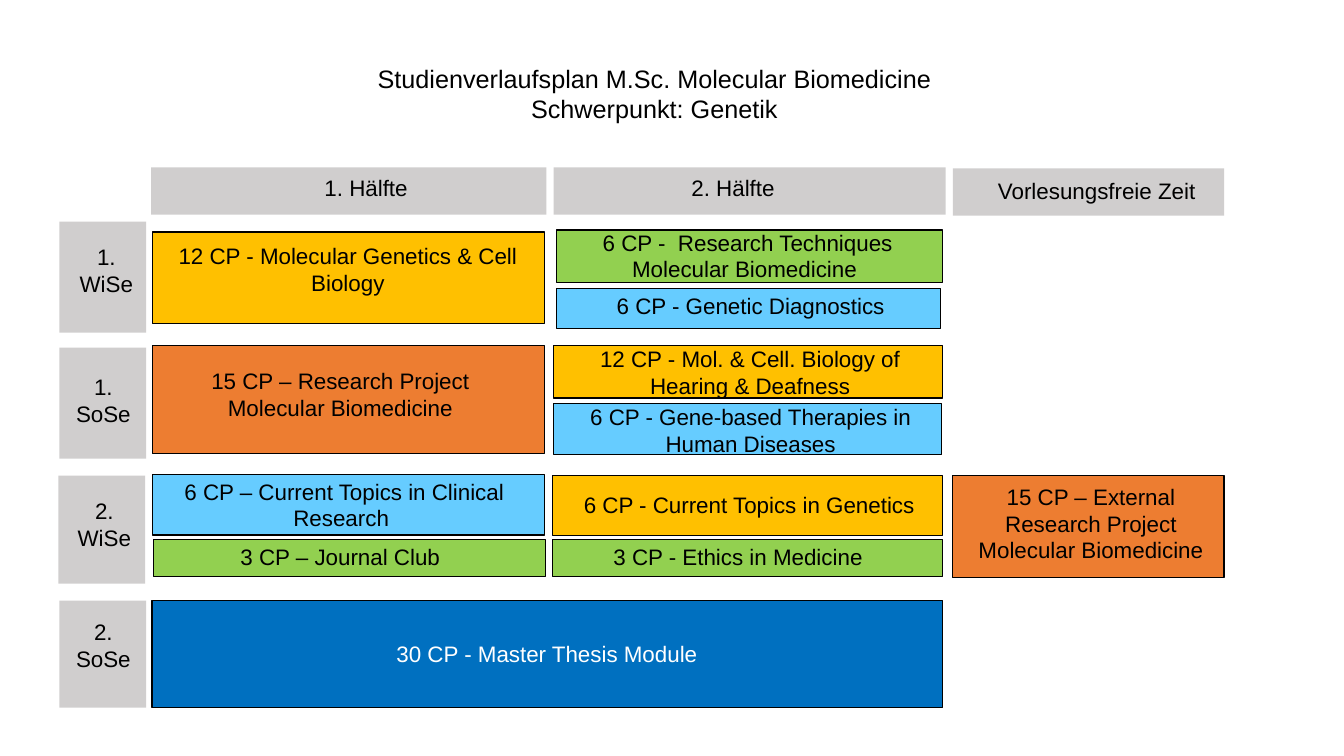
from pptx import Presentation
from pptx.dml.color import RGBColor
from pptx.enum.shapes import MSO_SHAPE
from pptx.enum.text import PP_ALIGN
from pptx.util import Inches, Pt

GREY, GOLD, ORANGE = "D0CECE", "FFC000", "ED7D31"
GREEN, SKY, BLUE = "92D050", "66CCFF", "0070C0"

deck = Presentation()
deck.slide_width, deck.slide_height = Inches(13.33), Inches(7.5)
slide = deck.slides.add_slide(deck.slide_layouts[6])


def add_box(place, fill, edge=True):
    box = slide.shapes.add_shape(MSO_SHAPE.RECTANGLE, *map(Inches, place))
    box.shadow.inherit = False
    box.fill.solid()
    box.fill.fore_color.rgb = RGBColor.from_string(fill)
    if edge:
        box.line.color.rgb = RGBColor.from_string("000000")
        box.line.width = Pt(1)
    else:
        box.line.fill.background()


def add_text(place, text, size=16, color="000000", align=PP_ALIGN.CENTER):
    frame = slide.shapes.add_textbox(*map(Inches, place)).text_frame
    frame.word_wrap = True
    frame.text = text
    for para in frame.paragraphs:
        para.alignment = align
        for run in para.runs:
            run.font.name = "Arial"
            run.font.size = Pt(size)
            run.font.color.rgb = RGBColor.from_string(color)


# Title
add_text((3.55, 0.58, 5.88, 0.71),
         "Studienverlaufsplan M.Sc. Molecular Biomedicine\nSchwerpunkt: Genetik", 18)

# Column heads: box left, top, width; text left, top, width; label
heads = [
    (1.5, 1.66, 3.92, 3.12, 1.68, 1.43, "1. Hälfte"),
    (5.49, 1.66, 3.89, 6.76, 1.68, 1.43, "2. Hälfte"),
    (9.45, 1.67, 2.69, 9.8, 1.71, 2.2, "Vorlesungsfreie Zeit"),
]
for left, top, width, text_left, text_top, text_width, label in heads:
    add_box((left, top, width, 0.47), GREY, edge=False)
    add_text((text_left, text_top, text_width, 0.37), label, align=PP_ALIGN.LEFT)

# Semesters: box left, top, height; text left, top; label
terms = [
    (0.59, 2.2, 1.1, 0.68, 2.36, "1.\nWiSe"),
    (0.59, 3.45, 1.1, 0.65, 3.65, "1.\nSoSe"),
    (0.58, 4.72, 1.07, 0.66, 4.88, "2.\nWiSe"),
    (0.59, 5.96, 1.06, 0.65, 6.08, "2.\nSoSe"),
]
for left, top, height, text_left, text_top, label in terms:
    add_box((left, top, 0.86, height), GREY, edge=False)
    add_text((text_left, text_top, 0.75, 0.64), label)

# Modules: box place, fill, text place, label
modules = [
    ((1.51, 2.3, 3.89, 0.91), GOLD, (1.49, 2.35, 3.92, 0.64),
     "12 CP - Molecular Genetics & Cell Biology"),
    ((5.52, 2.28, 3.83, 0.52), GREEN, (5.57, 2.22, 3.69, 0.64),
     "6 CP -  Research Techniques Molecular Biomedicine "),
    ((5.52, 2.86, 3.81, 0.4), SKY, (5.59, 2.85, 3.71, 0.37),
     "6 CP - Genetic Diagnostics"),
    ((1.51, 3.43, 3.89, 1.07), ORANGE, (1.58, 3.59, 3.59, 0.64),
     "15 CP – Research Project Molecular Biomedicine"),
    ((5.49, 3.43, 3.86, 0.52), GOLD, (5.74, 3.38, 3.4, 0.64),
     "12 CP - Mol. & Cell. Biology of Hearing & Deafness"),
    ((5.49, 4, 3.85, 0.51), SKY, (5.63, 3.95, 3.63, 0.64),
     "6 CP - Gene-based Therapies in Human Diseases"),
    ((1.51, 4.71, 3.89, 0.6), SKY, (1.68, 4.69, 3.47, 0.64),
     "6 CP – Current Topics in Clinical Research "),
    ((1.52, 5.35, 3.89, 0.37), GREEN, (2.12, 5.34, 2.51, 0.37),
     "3 CP – Journal Club"),
    ((5.48, 4.72, 3.87, 0.59), GOLD, (5.64, 4.82, 3.58, 0.37),
     "6 CP - Current Topics in Genetics"),
    ((5.48, 5.35, 3.87, 0.37), GREEN, (5.82, 5.34, 3, 0.37),
     "3 CP - Ethics in Medicine"),
    ((9.45, 4.72, 2.69, 1.01), ORANGE, (9.5, 4.74, 2.64, 0.91),
     "15 CP – External Research Project Molecular Biomedicine"),
    ((1.51, 5.96, 7.84, 1.06), BLUE, (3.61, 6.3, 3.63, 0.37),
     "30 CP - Master Thesis Module"),
]
for place, fill, spot, label in modules:
    add_box(place, fill)
    add_text(spot, label, color="FFFFFF" if fill == BLUE else "000000")

deck.save("out.pptx")
